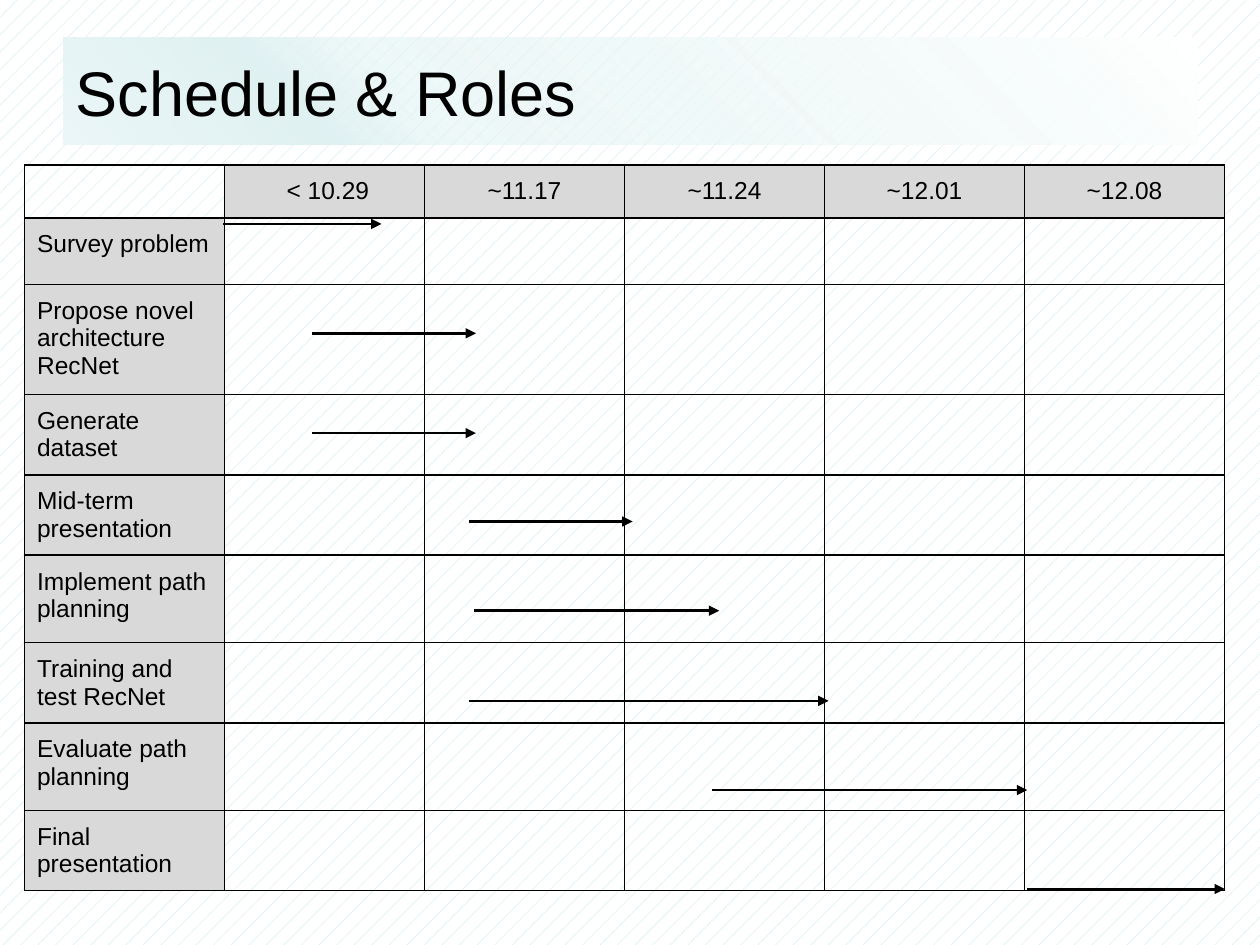
"""Build the schedule and roles slide with its table and time arrows."""
from typing import NamedTuple

from lxml import etree
from pptx import Presentation
from pptx.dml.color import RGBColor
from pptx.enum.dml import MSO_PATTERN
from pptx.enum.shapes import MSO_CONNECTOR
from pptx.enum.text import MSO_ANCHOR, PP_ALIGN
from pptx.oxml import parse_xml
from pptx.oxml.ns import nsdecls, qn
from pptx.util import Pt

DOTS = MSO_PATTERN.PERCENT_5
LINE = MSO_CONNECTOR.STRAIGHT
MID, TOP = MSO_ANCHOR.MIDDLE, MSO_ANCHOR.TOP
LEFT, MIDDLE = PP_ALIGN.LEFT, PP_ALIGN.CENTER
BLACK, GREY, WHITE, TEAL = "000000", "D9D9D9", "FFFFFF", "BBE0E3"
FONT = "Arial"
COL = 114.3
HEAD = 28
DATES = [" < 10.29", "~11.17", "~11.24", "~12.01", "~12.08"]
STOPS = [(0, WHITE, 100), (69, "E2F3F3", 60), (78, "E0F1F2", 100),
         (79, "E0F1F2", 100), (100, "EBF6F7", 100)]


class Task(NamedTuple):
    name: str
    high: float
    start: float
    end: float
    y: float


TASKS = [
    Task("Survey problem", 38, 127.5, 218, 128),
    Task("Propose novel architecture RecNet", 63, 178.5, 272, 190.5),
    Task("Generate dataset", 43, 178.5, 272, 247.5),
    Task("Mid-term presentation", 43, 268, 361.5, 298),
    Task("Implement path planning", 50, 271, 411, 349),
    Task("Training and test RecNet", 43, 268, 473.5, 400.5),
    Task("Evaluate path planning", 50, 407, 587, 451.5),
    Task("Final presentation", 43, 587, 700, 508),
]


def color(code: str) -> RGBColor:
    return RGBColor.from_string(code)


def write(frame, text: str, *, size: float, align=LEFT, anchor=TOP) -> None:
    frame.word_wrap = True
    frame.vertical_anchor = anchor
    para = frame.paragraphs[0]
    para.alignment = align
    run = para.add_run()
    run.text = text
    run.font.size = Pt(size)
    run.font.name = FONT
    run.font.bold = False
    run.font.color.rgb = color(BLACK)


def shade(shape) -> None:
    stops = "".join(
        f'<a:gs pos="{pos * 1000}"><a:srgbClr val="{code}">'
        f'<a:alpha val="{alpha * 1000}"/></a:srgbClr></a:gs>'
        for pos, code, alpha in STOPS)
    shape.fill.background()
    old = shape.element.spPr.find(qn("a:noFill"))
    old.addprevious(parse_xml(
        f'<a:gradFill {nsdecls("a")} rotWithShape="1"><a:gsLst>{stops}</a:gsLst>'
        '<a:lin ang="8100000" scaled="0"/></a:gradFill>'))
    shape.element.spPr.remove(old)


def style(cell, fill: str = "") -> None:
    props = cell._tc.get_or_add_tcPr()
    for side in ("lnL", "lnR", "lnT", "lnB"):
        props.append(parse_xml(
            f'<a:{side} {nsdecls("a")} w="12700"><a:solidFill>'
            f'<a:srgbClr val="{BLACK}"/></a:solidFill></a:{side}>'))
    if fill:
        cell.fill.solid()
        cell.fill.fore_color.rgb = color(fill)
    else:
        cell.fill.background()


def label(cell, text: str, align=LEFT) -> None:
    cell.margin_left = cell.margin_right = Pt(7.2)
    cell.margin_top = cell.margin_bottom = Pt(7.2)
    write(cell.text_frame, text, size=14, align=align)


def grid(slide) -> None:
    highs = [HEAD] + [task.high for task in TASKS]
    wide = len(DATES) + 1
    table = slide.shapes.add_table(
        len(highs), wide, Pt(14), Pt(94.3), Pt(COL * wide), Pt(sum(highs))).table
    table.first_row = table.horz_banding = False
    for col in table.columns:
        col.width = Pt(COL)
    for i, high in enumerate(highs):
        table.rows[i].height = Pt(high)
        for j in range(wide):
            style(table.cell(i, j), GREY if (i == 0) != (j == 0) else "")
    for j, date in enumerate(DATES, 1):
        label(table.cell(0, j), date, MIDDLE)
    for i, task in enumerate(TASKS, 1):
        label(table.cell(i, 0), task.name)


def arrow(slide, task: Task) -> None:
    link = slide.shapes.add_connector(
        LINE, Pt(task.start), Pt(task.y), Pt(task.end), Pt(task.y))
    link.line.color.rgb = color(BLACK)
    link.line.width = Pt(1.5)
    tip = etree.SubElement(link.line._get_or_add_ln(), qn("a:tailEnd"))
    tip.set("type", "triangle")
    etree.SubElement(link._element.spPr, qn("a:effectLst"))


def main() -> None:
    deck = Presentation()
    deck.slide_width, deck.slide_height = Pt(720), Pt(540)
    slide = deck.slides.add_slide(deck.slide_layouts[5])
    back = slide.background.fill
    back.patterned()
    back.pattern = DOTS
    back.fore_color.rgb = color(TEAL)
    back.back_color.rgb = color(WHITE)
    title = slide.shapes.title
    title.left, title.top = Pt(36), Pt(21.6)
    title.width, title.height = Pt(648), Pt(61.2)
    shade(title)
    write(title.text_frame, "Schedule & Roles", size=36, anchor=MID)
    grid(slide)
    for task in TASKS:
        arrow(slide, task)
    deck.save("out.pptx")


if __name__ == "__main__":
    main()
